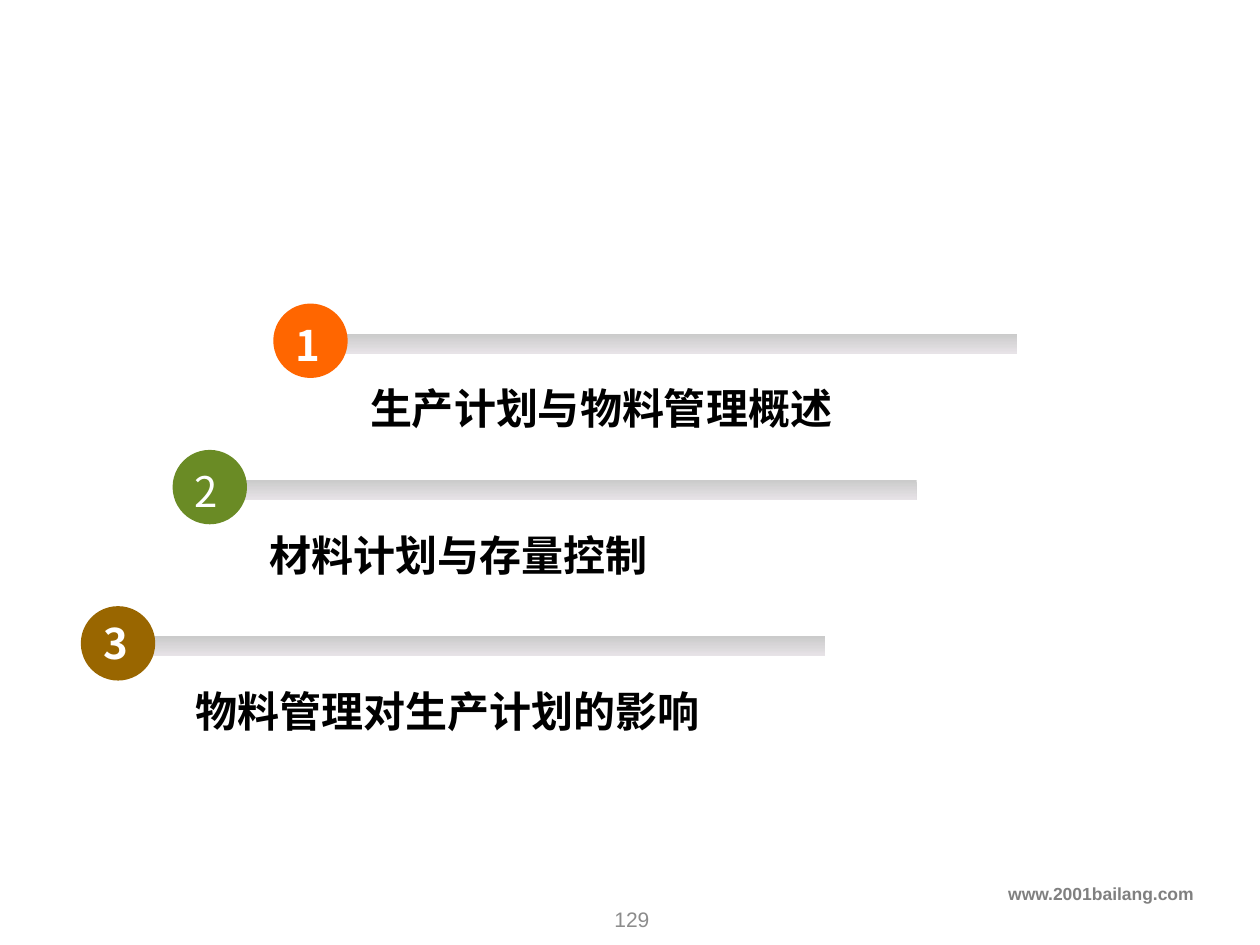
import pptx
import pptx.util
import pptx.dml.color
import pptx.enum.shapes
import pptx.enum.text
import pptx.oxml.ns
import pptx.oxml.xmlchemy

Cm = pptx.util.Cm
Shape = pptx.enum.shapes.MSO_SHAPE
Align = pptx.enum.text.PP_ALIGN
Anchor = pptx.enum.text.MSO_ANCHOR
CJK = "Noto Sans CJK SC"

# left, top, number, number is bold, number drop, label, label offset, colour
ITEMS = [
    (5.51, 6.12, "1", True, 0.2, "生产计划与物料管理概述", 1.7, "FF6600"),
    (3.48, 9.07, "2", False, 0.18, "材料计划与存量控制", 1.7, "6A8B25"),
    (1.63, 12.22, "3", True, 0.1, "物料管理对生产计划的影响", 2.06, "996600"),
]


def color(code):
    return pptx.dml.color.RGBColor.from_string(code)


def add_text(slide, box, text, size, tint, bold=False, face="Arial",
             align=Align.LEFT, anchor=Anchor.TOP, hang=0):
    frame = slide.shapes.add_textbox(*map(Cm, box)).text_frame
    frame.word_wrap = True
    frame.vertical_anchor = anchor
    para = frame.paragraphs[0]
    para.text = text
    para.alignment = align
    if hang:
        props = para._p.get_or_add_pPr()
        props.set("marL", str(int(Cm(hang))))
        props.set("indent", str(-int(Cm(hang))))
    run = para.runs[0]
    run.font.name = face
    run.font.size = pptx.util.Pt(size)
    run.font.bold = bold
    run.font.color.rgb = color(tint)
    # East Asian glyphs need their own typeface entry
    east = pptx.oxml.xmlchemy.OxmlElement("a:ea")
    east.set("typeface", face)
    latin = run._r.get_or_add_rPr().find(pptx.oxml.ns.qn("a:latin"))
    latin.addnext(east)


def add_plain(slide, kind, box):
    shape = slide.shapes.add_shape(kind, *map(Cm, box))
    shape.shadow.inherit = False
    shape.line.fill.background()
    return shape


def add_item(slide, left, top, num, bold, drop, label, shift, tint):
    # Bar
    bar = add_plain(slide, Shape.RECTANGLE,
                    (left + 0.4, top + 0.61, 14.6, 0.4))
    bar.fill.gradient()
    bar.fill.gradient_angle = 270
    for stop, shade, place in zip(bar.fill.gradient_stops,
                                  ("CBCBCB", "E7E3E7"), (0, 1)):
        stop.color.rgb = color(shade)
        stop.position = place
    # Numbered disc
    disc = add_plain(slide, Shape.OVAL, (left, top, 1.5, 1.5))
    disc.fill.solid()
    disc.fill.fore_color.rgb = color(tint)
    add_text(slide, (left + 0.2, top + drop, 0.95, 1.27), num, 24,
             "FFFFFF", bold, CJK)
    # Label
    add_text(slide, (left + shift, top + 1.47, 12.4, 1.27), label, 24,
             "000000", True, CJK, hang=1.27)


def add_footer(slide):
    add_text(slide, (0, 17.68, 24.31, 0.89), "www.2001bailang.com", 10,
             "808080", True, align=Align.RIGHT)
    add_text(slide, (9.88, 18.01, 5.72, 1.02), "129", 12, "8C8C8C",
             align=Align.CENTER, anchor=Anchor.MIDDLE)


def main():
    deck = pptx.Presentation()
    deck.slide_width, deck.slide_height = Cm(25.4), Cm(19.05)
    slide = deck.slides.add_slide(deck.slide_layouts[6])
    for item in ITEMS:
        add_item(slide, *item)
    add_footer(slide)
    deck.save("out.pptx")


if __name__ == "__main__":
    main()
